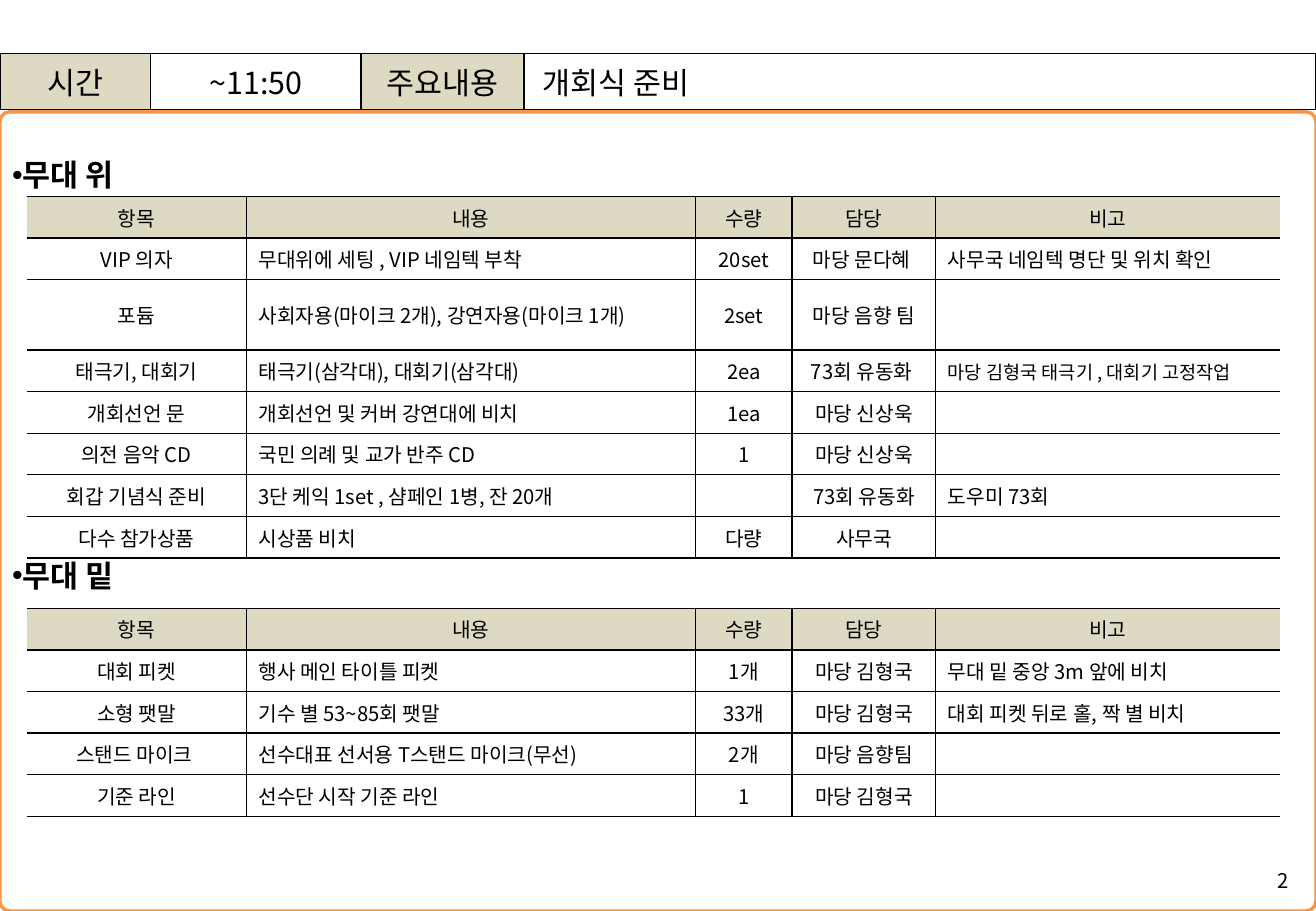
from lxml import etree
from pptx import Presentation
from pptx.dml.color import RGBColor
from pptx.enum.shapes import MSO_SHAPE
from pptx.enum.text import MSO_ANCHOR, MSO_AUTO_SIZE, PP_ALIGN
from pptx.oxml.ns import qn
from pptx.util import Cm, Pt

LEFT, CENTER, RIGHT = PP_ALIGN.LEFT, PP_ALIGN.CENTER, PP_ALIGN.RIGHT
TOP, MIDDLE = MSO_ANCHOR.TOP, MSO_ANCHOR.MIDDLE
ROUND = MSO_SHAPE.ROUNDED_RECTANGLE
NO_FIT = MSO_AUTO_SIZE.NONE

BLACK = RGBColor(0x00, 0x00, 0x00)
BEIGE = RGBColor(0xDD, 0xD9, 0xC3)
ORANGE = RGBColor(0xF7, 0x96, 0x46)
FONT = "Noto Sans CJK KR"

WIDTH, HEIGHT = 27.51, 19.05
BAR_COLS = [3.15, 4.4, 3.4, 16.56]
LIST_COLS = [4.59, 9.39, 2.02, 3.0, 7.2]
ROW, TALL = 0.87, 1.47

BAR = ["시간", "~11:50", "주요내용", " 개회식 준비"]
HEAD = ["항목", "내용", "수량", "담당", "비고"]
UPPER = [
    HEAD,
    ["VIP 의자", "무대위에 세팅 , VIP 네임텍 부착", "20set", "마당 문다혜 ",
     "사무국 네임텍 명단 및 위치 확인"],
    ["포듐", "사회자용(마이크 2개), 강연자용(마이크 1개)", "2set",
     "마당 음향 팀", ""],
    ["태극기, 대회기", "태극기(삼각대), 대회기(삼각대)", "2ea", "73회 유동화 ",
     "마당 김형국 태극기 , 대회기 고정작업"],
    ["개회선언 문", "개회선언 및 커버 강연대에 비치", "1ea", "마당 신상욱", ""],
    ["의전 음악 CD", "국민 의례 및 교가 반주 CD", "1", "마당 신상욱", ""],
    ["회갑 기념식 준비", "3단 케익 1set , 샴페인 1병, 잔 20개", "",
     "73회 유동화", "도우미 73회"],
    ["다수 참가상품", "시상품 비치", "다량", "사무국", ""],
]
LOWER = [
    HEAD,
    ["대회 피켓", "행사 메인 타이틀 피켓", "1개", "마당 김형국",
     "무대 밑 중앙 3m 앞에 비치"],
    ["소형 팻말", "기수 별 53~85회 팻말", "33개", "마당 김형국",
     "대회 피켓 뒤로 홀, 짝 별 비치"],
    ["스탠드 마이크 ", "선수대표 선서용 T스탠드 마이크(무선)", "2개",
     "마당 음향팀", ""],
    ["기준 라인", "선수단 시작 기준 라인", "1", "마당 김형국", ""],
]


def write(frame, text, size=12, bold=False, align=LEFT, anchor=MIDDLE):
    frame.vertical_anchor = anchor
    par = frame.paragraphs[0]
    par.alignment = align
    if not text:
        # Keeps the row of an empty cell low
        etree.SubElement(par._p, qn("a:endParaRPr"), sz=str(size * 100))
        return par
    run = par.add_run()
    run.text = text
    font = run.font
    font.size, font.bold, font.name = Pt(size), bold, FONT
    font.color.rgb = BLACK
    etree.SubElement(run._r.get_or_add_rPr(), qn("a:ea"), typeface=FONT)
    return par


def rule(cell, **widths):
    """Draws the cell borders; a width of 0 hides one."""
    props = cell._tc.get_or_add_tcPr()
    for side in "LRTB":
        width = widths[side]
        line = etree.SubElement(props, qn("a:ln" + side), w=str(Pt(width)))
        if width:
            fill = etree.SubElement(line, qn("a:solidFill"))
            etree.SubElement(fill, qn("a:srgbClr"), val=str(BLACK))
        else:
            etree.SubElement(line, qn("a:noFill"))


def shade(cell, on):
    if on:
        cell.fill.solid()
        cell.fill.fore_color.rgb = BEIGE
    else:
        cell.fill.background()


def grid(slide, left, top, cols, rows):
    """Adds a plain table with the given column and row sizes."""
    table = slide.shapes.add_table(
        len(rows), len(cols), Cm(left), Cm(top),
        Cm(sum(cols)), Cm(sum(rows))).table
    table.first_row = table.horz_banding = False
    for col, width in zip(table.columns, cols):
        col.width = Cm(width)
    for row, height in zip(table.rows, rows):
        row.height = Cm(height)
    return table


def add_bar(slide, left, top):
    table = grid(slide, left, top, BAR_COLS, [1.17])
    for c, text in enumerate(BAR):
        cell = table.cell(0, c)
        rule(cell, L=1, R=1, T=1, B=1)
        shade(cell, c in (0, 2))
        write(cell.text_frame, text, size=18, anchor=TOP,
              align=LEFT if c == 3 else CENTER)


def add_frame(slide, left, top, width, height):
    frame = slide.shapes.add_shape(
        ROUND, Cm(left), Cm(top), Cm(width), Cm(height))
    frame.adjustments[0] = 0.012
    frame.shadow.inherit = False
    frame.fill.background()
    frame.line.color.rgb = ORANGE
    frame.line.width = Pt(2)


def add_head(holder, text, left, top):
    holder.left, holder.top = Cm(left), Cm(top)
    holder.width, holder.height = Cm(8), Cm(1)
    holder.text_frame.auto_size = NO_FIT
    par = write(holder.text_frame, text, size=18, bold=True)
    par.space_before = Pt(0)
    props = par._p.get_or_add_pPr()
    props.set("marL", "0")
    props.set("indent", "0")
    etree.SubElement(props, qn("a:buChar"), char="•")


def add_list(slide, left, top, rows, tall=None, thin=None):
    """Rows from thin on have a thin line above; row tall has two lines."""
    sizes = [TALL if r == tall else ROW for r in range(len(rows))]
    table = grid(slide, left, top, LIST_COLS, sizes)
    thin = thin or len(rows)
    # Line widths, one more than there are columns or rows
    across = [0, 1, 0.5, 1, 1, 0]
    down = [0.5 if r >= thin else 1 for r in range(len(rows))] + [1]
    for r, row in enumerate(rows):
        for c, text in enumerate(row):
            cell = table.cell(r, c)
            rule(cell, L=across[c], R=across[c + 1], T=down[r], B=down[r + 1])
            shade(cell, r == 0)
            cell.vertical_anchor = MIDDLE
            write(cell.text_frame, text,
                  size=11 if text.startswith("마당 김형국 태극기") else 12,
                  align=LEFT if r and c in (1, 4) else CENTER)


def add_page(slide, left, top, width, height):
    box = slide.shapes.add_textbox(Cm(left), Cm(top), Cm(width), Cm(height))
    box.text_frame.word_wrap = True
    write(box.text_frame, "2", align=RIGHT)


def main():
    deck = Presentation()
    deck.slide_width, deck.slide_height = Cm(WIDTH), Cm(HEIGHT)
    slide = deck.slides.add_slide(deck.slide_layouts[3])
    title, first, second = slide.placeholders
    title._element.getparent().remove(title._element)

    # Frame, time bar and page number
    add_frame(slide, 0, 2.34, WIDTH, HEIGHT - 2.34)
    add_bar(slide, 0, 1.12)
    add_page(slide, 20.75, 17.91, 6.43, 1.02)

    # On the stage
    add_head(first, "무대 위", 0, 3.15)
    add_list(slide, 0.56, 4.11, UPPER, tall=2, thin=4)

    # Below the stage
    add_head(second, "무대 밑", 0, 11.53)
    add_list(slide, 0.56, 12.72, LOWER)

    deck.save("out.pptx")


if __name__ == "__main__":
    main()
